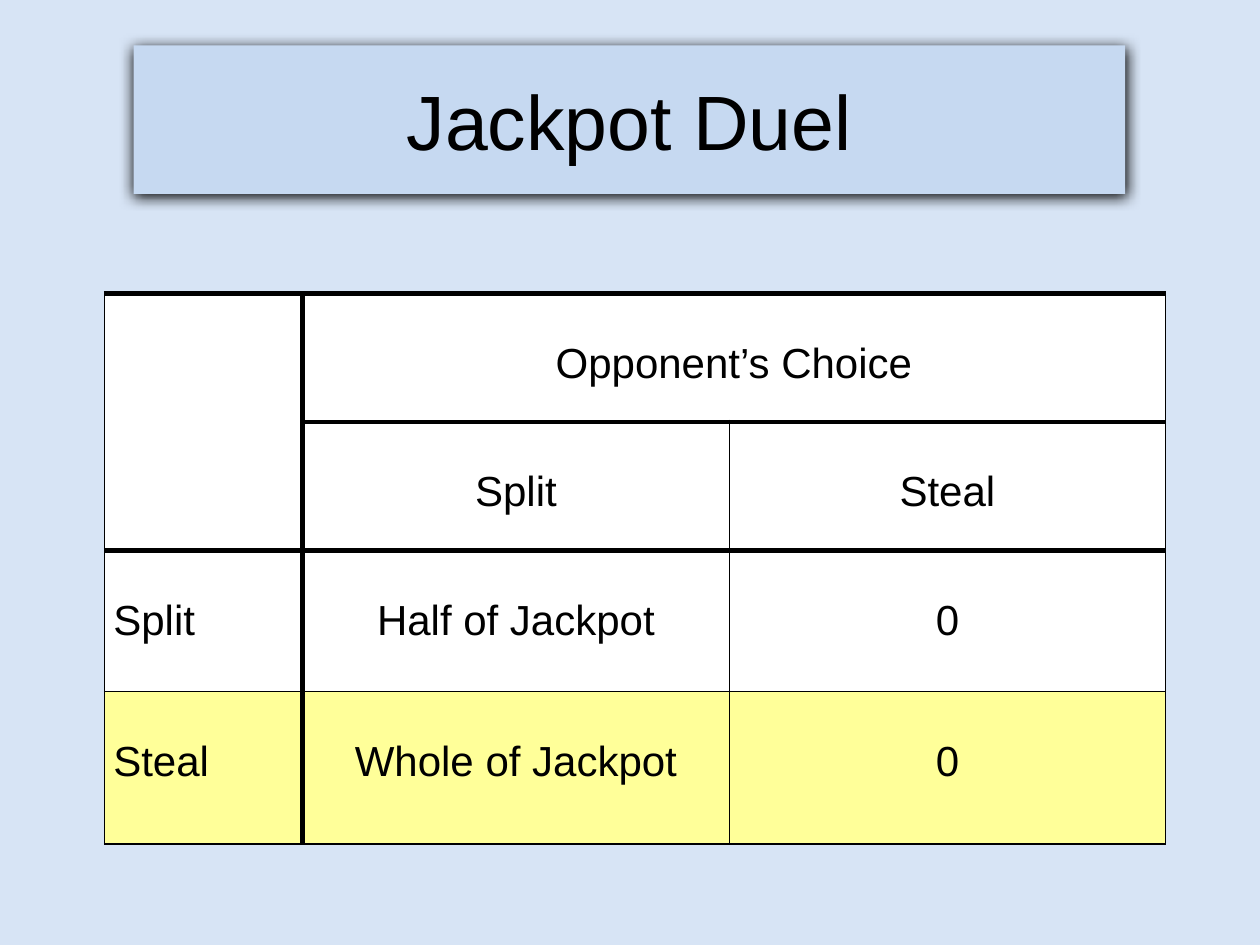
from lxml.etree import SubElement
from pptx import Presentation
from pptx.dml.color import RGBColor
from pptx.enum.text import MSO_ANCHOR, PP_ALIGN
from pptx.oxml import parse_xml
from pptx.oxml.ns import qn
from pptx.util import Inches, Pt

NS = 'xmlns:a="http://schemas.openxmlformats.org/drawingml/2006/main"'


def paint(fill, tone):
    fill.solid()
    fill.fore_color.rgb = RGBColor.from_string(tone)


def write(para, text, size, align):
    para.text = text
    para.alignment = align
    for key, val in {"name": "Arial", "size": Pt(size), "bold": False}.items():
        setattr(para.font, key, val)
    paint(para.font.fill, "000000")


# Slide and background
deck = Presentation()
deck.slide_width, deck.slide_height = Inches(10), Inches(7.5)
slide = deck.slides.add_slide(deck.slide_layouts[5])
paint(slide.background.fill, "D7E4F5")

# Title bar with soft shadow
title = slide.shapes.title
place = {"left": 1.06, "top": 0.36, "width": 7.87, "height": 1.18}
for key, val in place.items():
    setattr(title, key, Inches(val))
paint(title.fill, "C6D9F1")
title.text_frame.vertical_anchor = MSO_ANCHOR.MIDDLE
write(title.text_frame.paragraphs[0], "Jackpot Duel", 44, PP_ALIGN.CENTER)
title._element.spPr.append(parse_xml(
    f'<a:effectLst {NS}><a:outerShdw blurRad="{Pt(8.5)}" dist="{Pt(1)}" '
    'dir="5400000" rotWithShape="0"><a:srgbClr val="000000"/>'
    '</a:outerShdw></a:effectLst>'))

# Table grid
rows = [
    ["", "Opponent’s Choice", ""],
    ["", "Split", "Steal"],
    ["Split", "Half of Jackpot", "0"],
    ["Steal", "Whole of Jackpot", "0"],
]
wide = [1.57, 3.39, 3.46]
high = [1.02, 1.02, 1.12, 1.21]
frame = slide.shapes.add_table(
    len(rows), len(wide), Inches(0.83), Inches(2.33),
    Inches(sum(wide)), Inches(sum(high)))
table = frame.table
for col, size in zip(table.columns, wide):
    col.width = Inches(size)
for row, size in zip(table.rows, high):
    row.height = Inches(size)
table.cell(0, 0).merge(table.cell(1, 0))
table.cell(0, 1).merge(table.cell(0, 2))

# Rule widths, one per grid line
down = [1, 3, 1, 1]
cross = [3, 3, 3, 1, 1]
inset = {"margin_left": 0.07, "margin_right": 0.07,
         "margin_top": 0.37, "margin_bottom": 0}

# Cells: text, fill and borders
for r, row in enumerate(rows):
    for c, text in enumerate(row):
        cell = table.cell(r, c)
        for key, val in inset.items():
            setattr(cell, key, Inches(val))
        if text:
            write(cell.text_frame.paragraphs[0], text, 24,
                  PP_ALIGN.CENTER if c else PP_ALIGN.LEFT)
        tall, span = ((cell.span_height, cell.span_width)
                      if cell.is_merge_origin else (1, 1))
        edges = {"L": down[c], "R": down[c + span],
                 "T": cross[r], "B": cross[r + tall]}
        if cell.is_spanned:
            edges.pop("L" if c else "T")
        props = cell._tc.get_or_add_tcPr()
        for side, size in edges.items():
            line = SubElement(props, qn(f"a:ln{side}"), w=str(Pt(size)))
            ink = SubElement(line, qn("a:solidFill"))
            SubElement(ink, qn("a:srgbClr"), val="000000")
        paint(cell.fill, "FFFF99" if r == 3 else "FFFFFF")
        props.append(props.find(qn("a:solidFill")))

deck.save("out.pptx")
